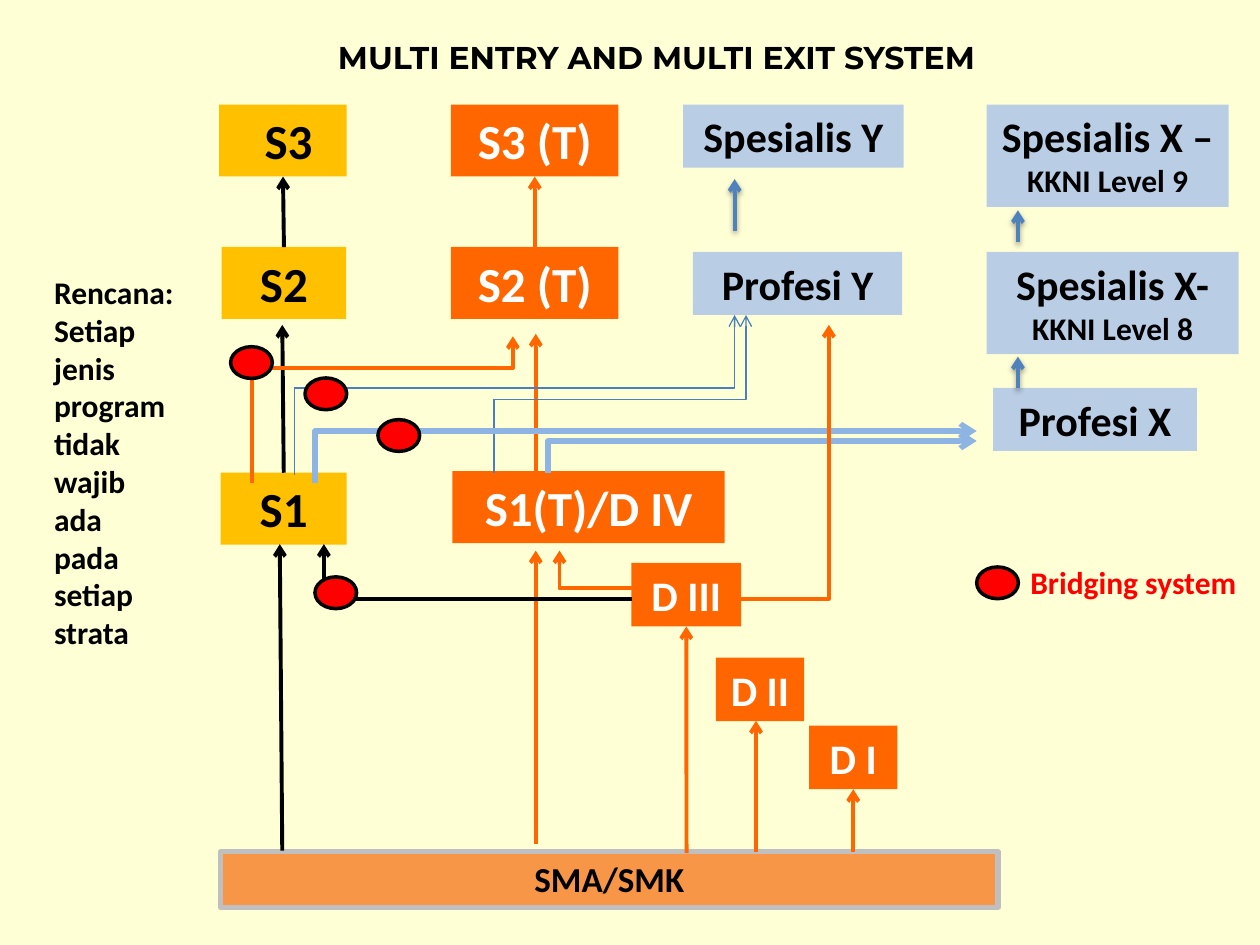
from lxml.etree import SubElement
from pptx import Presentation
from pptx.dml.color import RGBColor
from pptx.enum.shapes import MSO_CONNECTOR as Conn, MSO_SHAPE as Kind
from pptx.enum.text import MSO_ANCHOR as Anchor, MSO_AUTO_SIZE as Fit, PP_ALIGN as Align
from pptx.oxml import parse_xml
from pptx.oxml.ns import nsdecls, qn
from pptx.util import Cm, Pt

rgb = RGBColor.from_string
BLACK, WHITE, RED = "000000", "FFFFFF", "FF0000"
GOLD, ORANGE, PALE = "FFC000", "FF6600", "B9CDE5"
BLUE, THIN, LIGHT = "4F81BD", "4B7EBC", "8EB4E3"
SHADOW = (f'<a:effectLst {nsdecls("a")}><a:outerShdw blurRad="40000" dist="20000" '
          'dir="5400000" rotWithShape="0"><a:srgbClr val="000000">'
          '<a:alpha val="38000"/></a:srgbClr></a:outerShdw></a:effectLst>')


def write(frame, lines, sizes, color, align=Align.CENTER, face="Calibri"):
    """Fill a text frame; the last size serves all remaining lines."""
    for i, line in enumerate(lines):
        para = frame.paragraphs[0] if i == 0 else frame.add_paragraph()
        para.text = line
        para.alignment = align
        font = para.font
        font.name, font.bold = face, True
        font.size = Pt(sizes[min(i, len(sizes) - 1)])
        font.color.rgb = rgb(color)


def block(kind, x, y, w, h, fill, edge=None, width=0):
    """Add a filled shape, with an outline if an edge colour is given."""
    shape = shapes.add_shape(kind, Cm(x), Cm(y), Cm(w), Cm(h))
    shape.shadow.inherit = False
    shape.fill.solid()
    shape.fill.fore_color.rgb = rgb(fill)
    if edge:
        shape.line.color.rgb = rgb(edge)
        shape.line.width = Pt(width)
    else:
        shape.line.fill.background()
    return shape


deck = Presentation()
deck.slide_width, deck.slide_height = Cm(25.4), Cm(19.05)
slide = deck.slides.add_slide(deck.slide_layouts[5])
shapes = slide.shapes
slide.background.fill.solid()
slide.background.fill.fore_color.rgb = rgb("FFFFD6")

# Title
title = shapes.title
title.left, title.top, title.width, title.height = Cm(2.34), Cm(0.64), Cm(21.79), Cm(1.02)
title.text_frame.auto_size = Fit.NONE
title.text_frame.vertical_anchor = Anchor.TOP
write(title.text_frame, ["MULTI ENTRY AND MULTI EXIT SYSTEM"], [18], BLACK, face="Montserrat")

# Programme boxes: lines, left, top, width, height, fill, text colour, sizes
boxes = {}
for lines, x, y, w, h, fill, color, sizes in [
    ([" S3"], 4.42, 2.11, 2.57, 1.45, GOLD, BLACK, [28]),
    (["S2"], 4.47, 4.98, 2.51, 1.45, GOLD, BLACK, [28]),
    (["S1"], 4.45, 9.53, 2.54, 1.45, GOLD, BLACK, [28]),
    (["S3 (T)"], 9.09, 2.11, 3.38, 1.45, ORANGE, WHITE, [28]),
    (["S2 (T)"], 9.09, 4.98, 3.38, 1.45, ORANGE, WHITE, [28]),
    (["S1(T)/D IV"], 9.12, 9.5, 5.49, 1.45, ORANGE, WHITE, [28]),
    (["D III"], 12.73, 11.35, 2.21, 1.28, ORANGE, WHITE, [24]),
    (["D II"], 14.43, 13.26, 1.78, 1.28, ORANGE, WHITE, [24]),
    (["D I"], 16.31, 14.63, 1.78, 1.28, ORANGE, WHITE, [24]),
    (["Spesialis Y"], 13.77, 2.11, 4.45, 1.27, PALE, BLACK, [24]),
    (["Profesi Y"], 13.97, 5.08, 4.22, 1.27, PALE, BLACK, [24]),
    (["Spesialis X –", "KKNI Level 9"], 19.89, 2.11, 4.88, 2.06, PALE, BLACK, [24, 18]),
    (["Spesialis X-", "KKNI Level 8"], 19.89, 5.08, 5.08, 2.06, PALE, BLACK, [24, 18]),
    (["Profesi X"], 20.02, 7.82, 4.11, 1.27, PALE, BLACK, [24]),
]:
    box = block(Kind.RECTANGLE, x, y, w, h, fill)
    box.text_frame.vertical_anchor = Anchor.MIDDLE if lines[0][0] == "D" else Anchor.TOP
    write(box.text_frame, lines, sizes, color)
    boxes[lines[0].strip()] = box

# School base
base = block(Kind.RECTANGLE, 4.45, 17.17, 15.67, 1.12, "F79646", "BFBFBF", 3)
base.text_frame.vertical_anchor = Anchor.TOP
write(base.text_frame, ["SMA/SMK"], [20], BLACK)

# Straight links: ends, colour, width, arrowhead, box at start, box at end
for x1, y1, x2, y2, color, width, head, start, end in [
    (5.69, 17.15, 5.64, 10.97, BLACK, 2.25, True, None, None),
    (5.72, 9.53, 5.69, 6.55, BLACK, 2.25, True, "S1", None),
    (5.72, 4.98, 5.7, 3.56, BLACK, 2.25, True, "S2", "S3"),
    (10.8, 17.02, 10.8, 11.1, ORANGE, 2.25, True, None, None),
    (10.8, 9.58, 10.8, 6.73, ORANGE, 2.25, True, None, None),
    (10.78, 4.98, 10.78, 3.56, ORANGE, 2.25, True, "S2 (T)", "S3 (T)"),
    (13.84, 17.2, 13.84, 12.63, ORANGE, 2.25, True, None, "D III"),
    (15.24, 17.17, 15.24, 14.53, ORANGE, 2.25, True, None, None),
    (17.2, 17.17, 17.2, 15.91, ORANGE, 2.25, True, None, "D I"),
    (5.08, 7.62, 5.08, 9.73, ORANGE, 2.25, False, None, None),
    (5.94, 7.85, 5.94, 9.58, THIN, 0.75, False, None, None),
    (9.96, 8.05, 9.96, 9.53, THIN, 0.75, False, None, None),
    (14.81, 4.65, 14.81, 3.61, BLUE, 2.25, True, None, None),
    (20.52, 4.88, 20.52, 4.24, BLUE, 2.25, True, None, None),
    (20.52, 7.82, 20.52, 7.19, BLUE, 2.25, True, None, None),
]:
    link = shapes.add_connector(Conn.STRAIGHT, Cm(x1), Cm(y1), Cm(x2), Cm(y2))
    if start:
        link.begin_connect(boxes[start], 0)
    if end:
        link.end_connect(boxes[end], 2)
    link.line.color.rgb = rgb(color)
    link.line.width = Pt(width)
    if head:
        SubElement(link.line._get_or_add_ln(), qn("a:tailEnd"), type="arrow")
    props = link._element.spPr
    if color == BLUE:
        props.append(parse_xml(SHADOW))
    else:
        SubElement(props, qn("a:effectLst"))

# Bent links: corner points, colour, width
for points, color, width in [
    ([(11.05, 9.53), (11.05, 8.89), (19.69, 8.89)], LIGHT, 3),
    ([(6.35, 9.73), (6.35, 8.69), (19.69, 8.69)], LIGHT, 3),
    ([(12.75, 12.07), (6.53, 12.07), (6.53, 10.97)], BLACK, 2.25),
    ([(12.75, 11.86), (11.28, 11.86), (11.28, 11.1)], ORANGE, 2.25),
    ([(5.92, 7.82), (14.81, 7.82), (14.81, 6.35)], THIN, 0.75),
    ([(9.96, 8.05), (15.04, 8.05), (15.04, 6.35)], THIN, 0.75),
    ([(5.08, 7.42), (10.34, 7.42), (10.34, 6.78)], ORANGE, 2.25),
    ([(14.94, 12.07), (16.71, 12.07), (16.71, 6.55)], ORANGE, 2.25),
]:
    first, *rest = [(Cm(x), Cm(y)) for x, y in points]
    pen = shapes.build_freeform(*first)
    pen.add_line_segments(rest, close=False)
    bend = pen.convert_to_shape()
    bend.shadow.inherit = False
    bend.fill.background()
    bend.line.color.rgb = rgb(color)
    bend.line.width = Pt(width)
    SubElement(bend.line._get_or_add_ln(), qn("a:tailEnd"), type="arrow")

# Bridging marks, the last one for the legend
for x, y in [(6.35, 11.63), (4.65, 6.99), (6.15, 7.62), (7.62, 8.46), (19.69, 11.43)]:
    block(Kind.OVAL, x, y, 0.84, 0.64, RED, BLACK, 2)

# Legend and side note
plan = ["Rencana:", "Setiap", "jenis", "program", "tidak",
        "wajib", "ada", "pada", "setiap", "strata"]
for lines, x, y, w, h, color in [
    (["Bridging system"], 20.52, 11.23, 4.7, 1.02, RED),
    (plan, 0.84, 5.38, 2.95, 8.71, BLACK),
]:
    note = shapes.add_textbox(Cm(x), Cm(y), Cm(w), Cm(h))
    note.text_frame.word_wrap = False
    write(note.text_frame, lines, [18], color, Align.LEFT)

deck.save("out.pptx")
